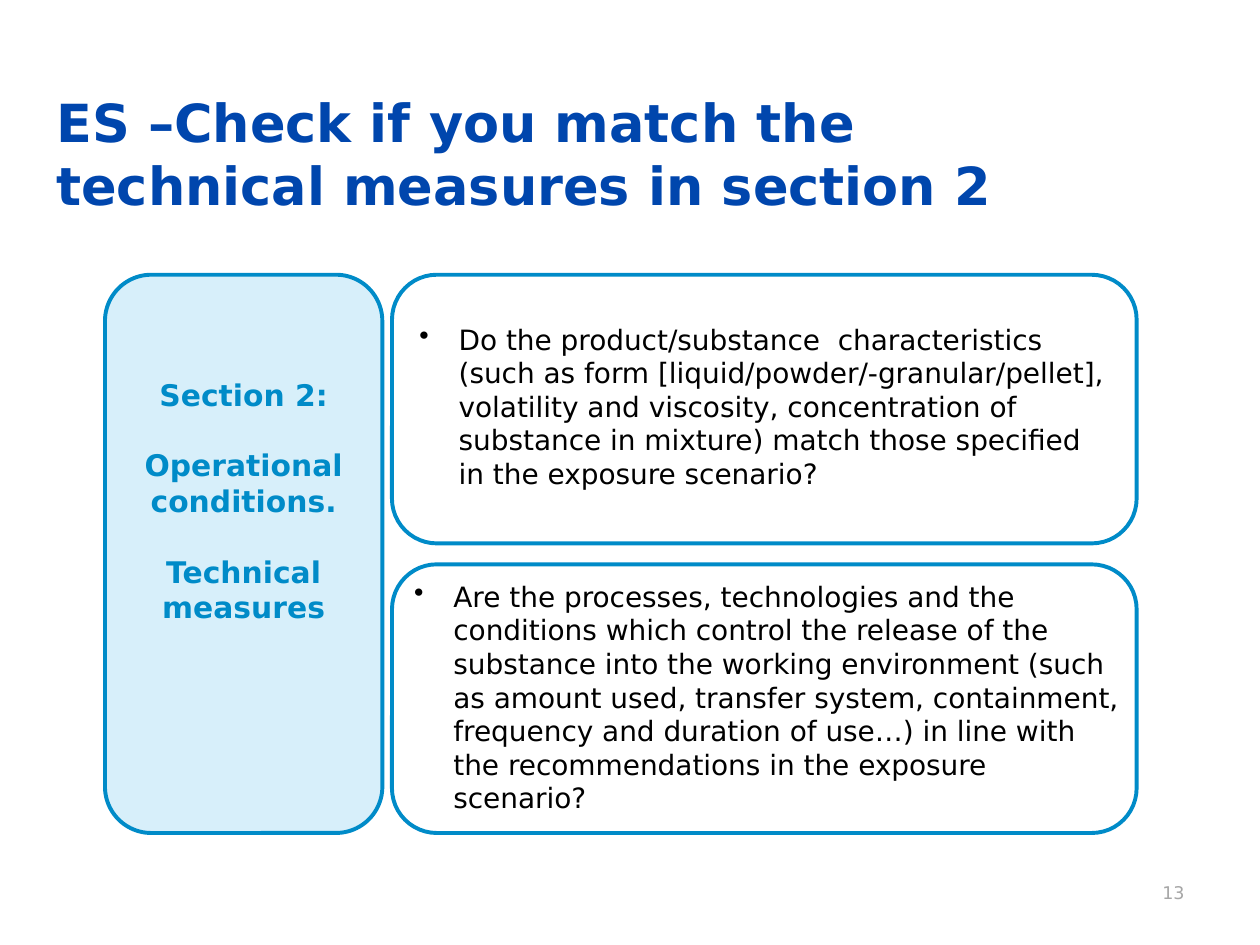
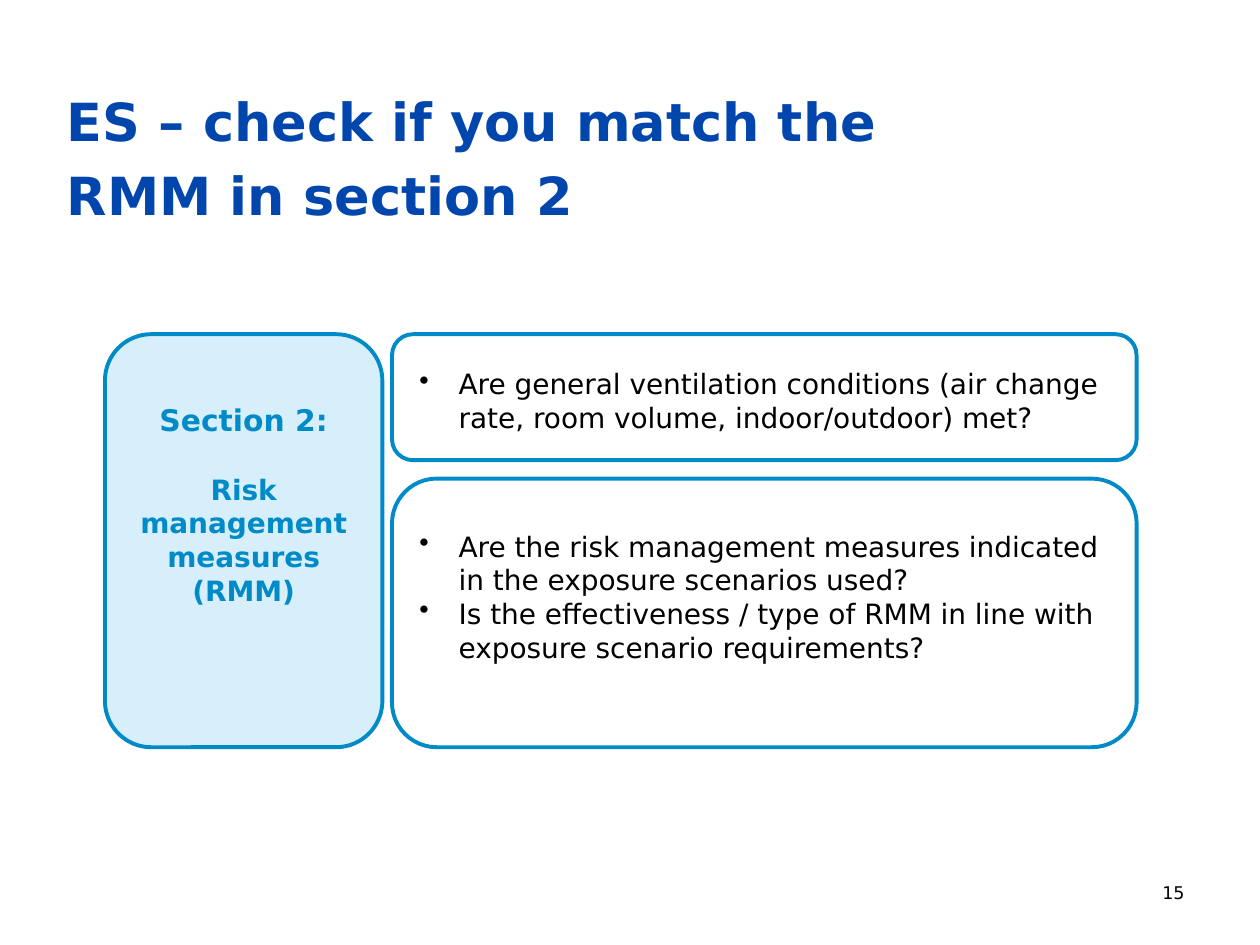
from pptx import Presentation
from pptx.dml.color import RGBColor
from pptx.enum.shapes import MSO_SHAPE
from pptx.enum.text import MSO_ANCHOR, MSO_AUTO_SIZE, PP_ALIGN
from pptx.oxml.ns import qn
from pptx.util import Pt
from lxml import etree

ROUNDED = MSO_SHAPE.ROUNDED_RECTANGLE
TOP = MSO_ANCHOR.TOP
NO_FIT = MSO_AUTO_SIZE.NONE
LEFT, CENTER, RIGHT = PP_ALIGN.LEFT, PP_ALIGN.CENTER, PP_ALIGN.RIGHT

FONT = "DejaVu Sans"
TITLE_BLUE = "0046AD"
FRAME_BLUE = "008BC8"
PALE_BLUE = "D7EFFA"
BLACK = "000000"
GREY = "A6A6A6"

TITLE_ONLY = 5
SECTION_LEFT, SECTION_WIDTH = 60, 158.5
PANEL_LEFT, PANEL_WIDTH = 224, 425.5
BULLET_INDENT = 22.5


def color(value):
    return RGBColor.from_string(value)


def add_bullet(para):
    properties = para._p.get_or_add_pPr()
    properties.set("marL", str(Pt(BULLET_INDENT)))
    properties.set("indent", str(-Pt(BULLET_INDENT)))
    etree.SubElement(properties, qn("a:buChar")).set("char", "•")


def write(frame, lines, size=16, ink=BLACK, bold=False, align=LEFT,
          gap=0, line_height=None, bullets=False, last_size=None):
    """Fill a text frame with one paragraph per line, gap points apart."""
    frame.word_wrap = True
    frame.auto_size = NO_FIT
    frame.vertical_anchor = TOP
    for index, line in enumerate(lines):
        para = frame.add_paragraph() if index else frame.paragraphs[0]
        para.alignment = align
        para.space_before = Pt(gap if index else 0)
        if line_height:
            para.line_spacing = Pt(line_height)
        if bullets:
            add_bullet(para)
        span = para.add_run()
        span.text = line
        is_last = index == len(lines) - 1
        span.font.size = Pt(last_size if last_size and is_last else size)
        span.font.name = FONT
        span.font.bold = bold
        span.font.color.rgb = color(ink)


def place(shape, left, top, width, height):
    shape.left, shape.top = Pt(left), Pt(top)
    shape.width, shape.height = Pt(width), Pt(height)


def add_text(slide, lines, left, top, width, height, **text_format):
    box = slide.shapes.add_textbox(Pt(left), Pt(top), Pt(width), Pt(height))
    write(box.text_frame, lines, **text_format)


def add_frame(slide, left, top, width, height, fill=None):
    frame = slide.shapes.add_shape(ROUNDED, Pt(left), Pt(top),
                                   Pt(width), Pt(height))
    frame.shadow.inherit = False
    frame.line.color.rgb = color(FRAME_BLUE)
    frame.line.width = Pt(2.25)
    if fill:
        frame.fill.solid()
        frame.fill.fore_color.rgb = color(fill)
    else:
        frame.fill.background()


def add_slide(deck, title_lines, title_left, title_top, number, number_ink):
    """Add a slide with its title and page number."""
    slide = deck.slides.add_slide(deck.slide_layouts[TITLE_ONLY])
    title = slide.shapes.title
    place(title, title_left, title_top, 600, 84)
    write(title.text_frame, title_lines, size=30, ink=TITLE_BLUE, bold=True,
          gap=6, line_height=36)
    add_text(slide, [number], 516, 500.5, 168, 29, size=10, ink=number_ink,
             align=RIGHT)
    return slide


def add_section(slide, lines, top, height, text_top, last_size=None):
    """Add the tall section card on the left."""
    add_frame(slide, SECTION_LEFT, top, SECTION_WIDTH, height, PALE_BLUE)
    add_text(slide, lines, SECTION_LEFT + 5.5, text_top, 147.5, 150, size=17,
             ink=FRAME_BLUE, bold=True, align=CENTER, gap=20,
             last_size=last_size)


def add_panel(slide, questions, top, height, text_top, text_left=232.5,
              text_width=408):
    """Add an outlined panel with bulleted questions."""
    add_frame(slide, PANEL_LEFT, top, PANEL_WIDTH, height)
    add_text(slide, questions, text_left, text_top, text_width,
             top + height - text_top, bullets=True)


def add_technical_measures(deck):
    slide = add_slide(
        deck, ["ES –Check if you match the technical measures in section 2"],
        25, 48, "13", GREY)
    # The title wraps before "technical measures" within its narrower box.
    slide.shapes.title.width = Pt(560)
    top, height, panel_height = 157, 319, 153.5
    add_section(slide, ["Section 2:", "Operational conditions.",
                        "Technical measures"], top, height, 211.5)
    add_panel(slide, [
        "Do the product/substance  characteristics (such as form "
        "[liquid/powder/-granular/pellet], volatility and viscosity, "
        "concentration of substance in mixture) match those specified in "
        "the exposure scenario?"], top, panel_height, 180.5)
    add_panel(slide, [
        "Are the processes, technologies and the conditions which control "
        "the release of the substance into the working environment (such as "
        "amount used, transfer system, containment, frequency and duration "
        "of use…) in line with the recommendations in the exposure "
        "scenario?"], top + height - panel_height, panel_height, 327.5,
        text_left=229.5, text_width=420)


def add_risk_management(deck):
    slide = add_slide(
        deck, ["ES – check if you match the", "RMM in section 2"],
        31, 47.5, "15", BLACK)
    top, height, panel_height = 191, 236, 153.5
    add_section(slide, ["Section 2:", "Risk management measures (RMM)"],
                top, height, 226, last_size=16)
    add_panel(slide, [
        "Are general ventilation conditions (air change rate, room volume, "
        "indoor/outdoor) met?"], top, 72, 206)
    add_panel(slide, [
        "Are the risk management measures indicated in the exposure "
        "scenarios used?",
        "Is the effectiveness / type of RMM in line with exposure scenario "
        "requirements?"], top + height - panel_height, panel_height, 299)


def main():
    deck = Presentation()
    deck.slide_width, deck.slide_height = Pt(720), Pt(540)
    add_technical_measures(deck)
    add_risk_management(deck)
    deck.save("out.pptx")


if __name__ == "__main__":
    main()
